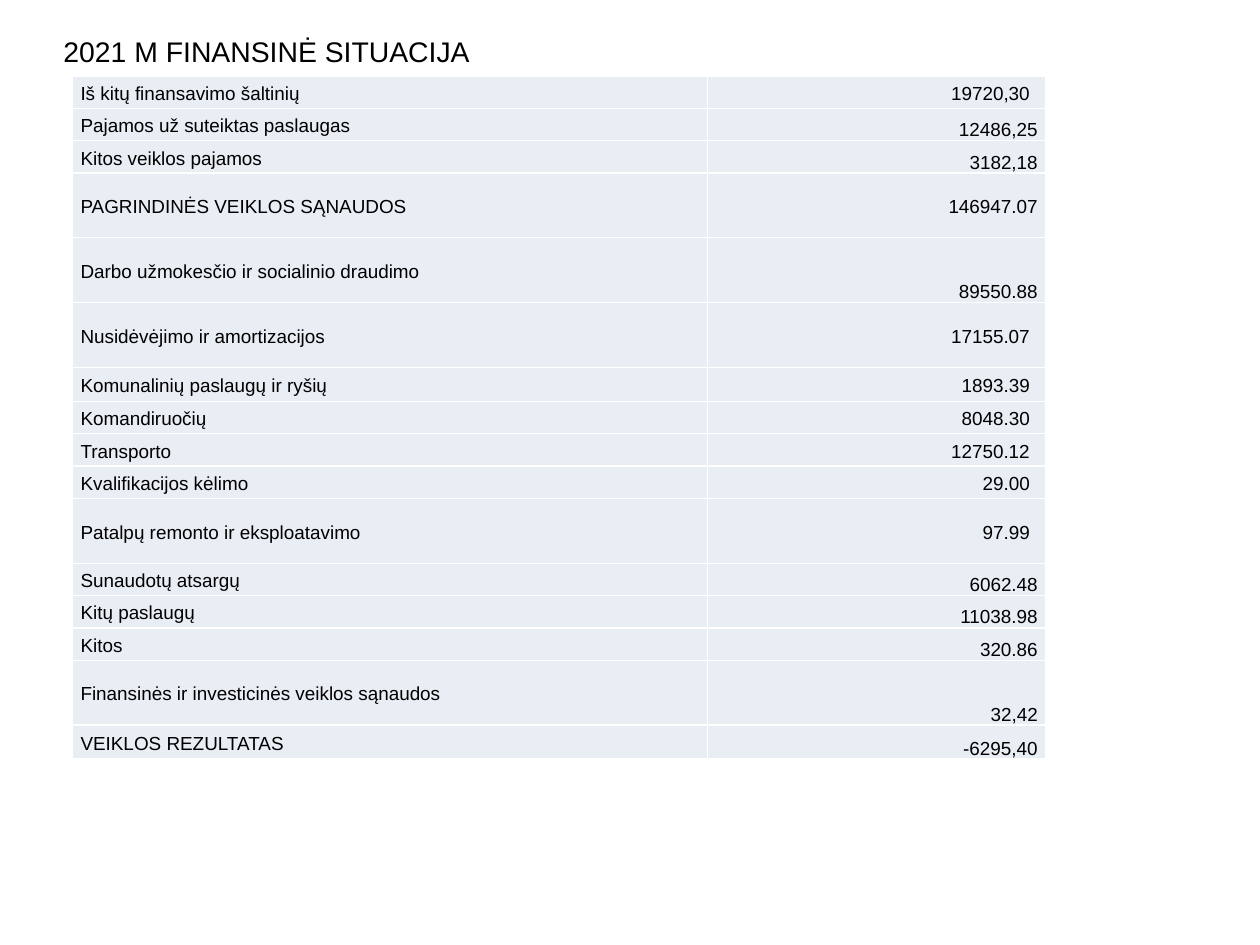
"""Build the slide with the 2021 financial situation table."""
from pptx import Presentation
from pptx.dml.color import RGBColor
from pptx.enum.text import MSO_ANCHOR as ANCHOR, PP_ALIGN as ALIGN
from pptx.oxml import parse_xml
from pptx.oxml.ns import nsdecls
from pptx.util import Emu, Inches, Pt


def rgb(color):
    return RGBColor.from_string(color)


def style(p, size):
    p.font.size = Pt(size)
    p.font.name = "Arial"
    p.font.color.rgb = rgb("000000")


SINGLE, TALL, LOOSE = 1, 2, 1.05
MID, LOW = ANCHOR.MIDDLE, ANCHOR.BOTTOM
PAD, INDENTED = 0.07, 0.14
ROWS = [
    ("Iš kitų finansavimo šaltinių", "19720,30", SINGLE, MID, INDENTED),
    ("Pajamos už suteiktas paslaugas", "12486,25", SINGLE, LOW, PAD),
    ("Kitos veiklos pajamos", "3182,18", SINGLE, LOW, PAD),
    ("PAGRINDINĖS VEIKLOS SĄNAUDOS", "146947.07", TALL, MID, PAD),
    ("Darbo užmokesčio ir socialinio draudimo", "89550.88", TALL, LOW, PAD),
    ("Nusidėvėjimo ir amortizacijos", "17155.07", TALL, MID, INDENTED),
    ("Komunalinių paslaugų ir ryšių", "1893.39", LOOSE, MID, INDENTED),
    ("Komandiruočių", "8048.30", SINGLE, MID, INDENTED),
    ("Transporto", "12750.12", SINGLE, MID, INDENTED),
    ("Kvalifikacijos kėlimo", "29.00", SINGLE, MID, INDENTED),
    ("Patalpų remonto ir eksploatavimo", "97.99", TALL, MID, INDENTED),
    ("Sunaudotų atsargų", "6062.48", SINGLE, LOW, PAD),
    ("Kitų paslaugų", "11038.98", SINGLE, LOW, PAD),
    ("Kitos", "320.86", SINGLE, LOW, PAD),
    ("Finansinės ir investicinės veiklos sąnaudos", "32,42", TALL, LOW, PAD),
    ("VEIKLOS REZULTATAS", "-6295,40", LOOSE, LOW, PAD),
]

prs = Presentation()
prs.slide_width = Emu(10158413)
prs.slide_height = Emu(7621588)
s = prs.slides.add_slide(prs.slide_layouts[6])

title = s.shapes.add_textbox(Inches(0.56), Inches(0.33), Inches(10), Inches(0.25))
tf = title.text_frame
tf.word_wrap = True
tf.vertical_anchor = MID
tf.margin_left = tf.margin_right = tf.margin_top = tf.margin_bottom = 0
tf.text = "2021 M FINANSINĖ SITUACIJA"
style(tf.paragraphs[0], 18)

widths, height = (5.6, 2.98), 6.03
unit = height / sum(row[2] for row in ROWS)
table = s.shapes.add_table(len(ROWS), 2, Inches(0.64), Inches(0.67),
                           Inches(sum(widths)), Inches(height)).table
table.first_row = table.horz_banding = False
for column, width in zip(table.columns, widths):
    column.width = Inches(width)

for i, (label, value, units, anchor, indent) in enumerate(ROWS):
    table.rows[i].height = Inches(units * unit)
    cells = ((label, ALIGN.LEFT, MID, PAD), (value, ALIGN.RIGHT, anchor, indent))
    for j, (text, align, vertical, right) in enumerate(cells):
        cell = table.cell(i, j)
        cell.text = text
        cell.vertical_anchor = vertical
        cell.margin_left, cell.margin_right = Inches(PAD), Inches(right)
        cell.margin_top = cell.margin_bottom = 0
        p = cell.text_frame.paragraphs[0]
        p.alignment = align
        p.line_spacing = 1.15
        style(p, 12)
        tc_pr = cell._tc.get_or_add_tcPr()
        for side in ("lnL", "lnR", "lnT", "lnB"):
            tc_pr.append(parse_xml(
                f'<a:{side} {nsdecls("a")} w="{Pt(1)}"><a:solidFill>'
                f'<a:srgbClr val="FFFFFF"/></a:solidFill></a:{side}>'))
        cell.fill.solid()
        cell.fill.fore_color.rgb = rgb("E9EDF4")

prs.save("out.pptx")
